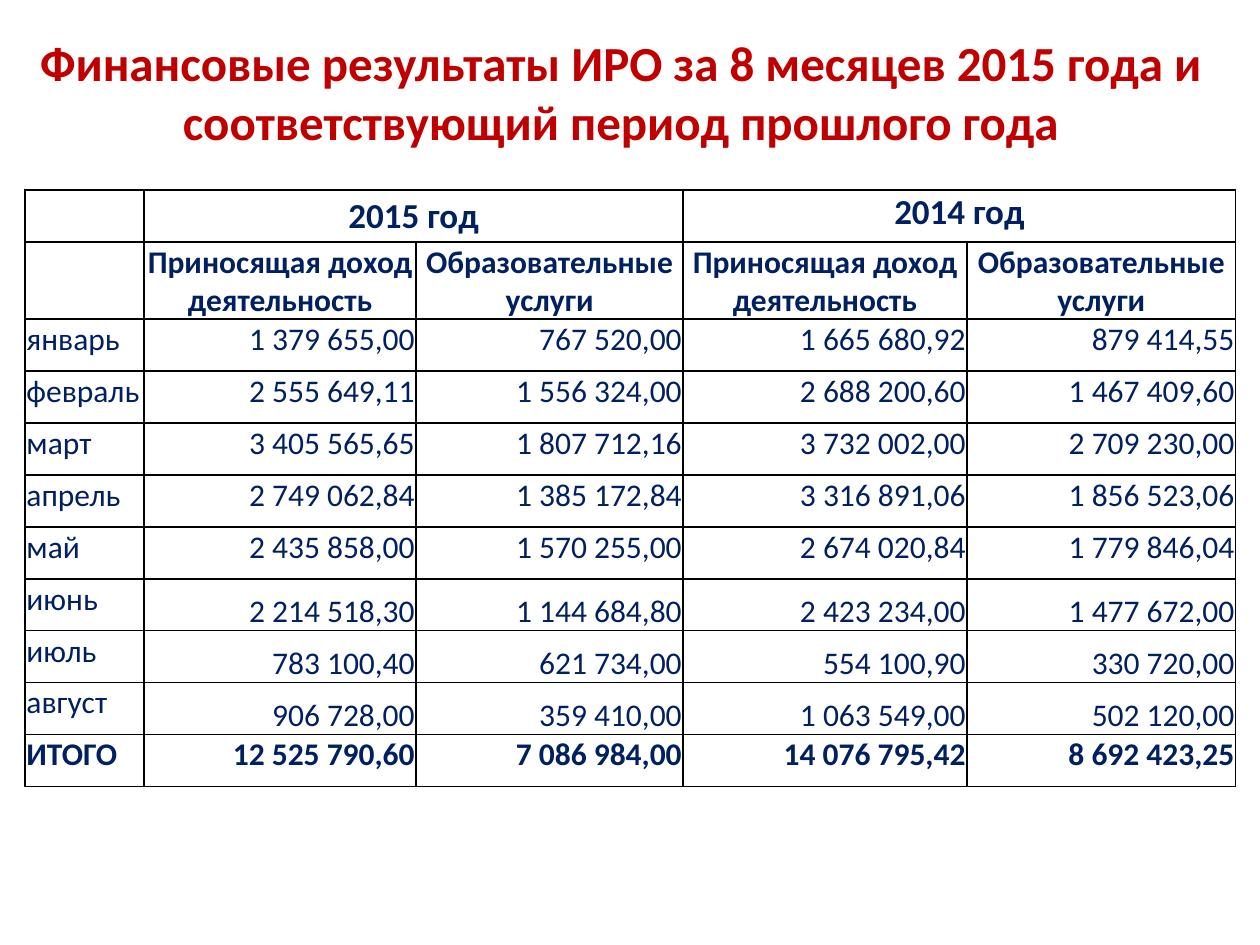
from lxml import etree
from pptx import Presentation
from pptx.dml.color import RGBColor
from pptx.enum.text import MSO_ANCHOR, PP_ALIGN
from pptx.oxml.ns import qn
from pptx.util import Pt

LEFT, CENTER, RIGHT = PP_ALIGN.LEFT, PP_ALIGN.CENTER, PP_ALIGN.RIGHT
TOP, MIDDLE, BOTTOM = MSO_ANCHOR.TOP, MSO_ANCHOR.MIDDLE, MSO_ANCHOR.BOTTOM

FONT = "Calibri"
RED, NAVY, BLACK = "C00000", "002060", "000000"
TITLE = "Финансовые результаты ИРО за 8 месяцев 2015 года и соответствующий период прошлого года"
YEARS = ["2015 год", "2014 год"]
INCOME_KINDS = ["Приносящая доход деятельность", "Образовательные услуги"]
RESULTS = [
    ["январь", "1 379 655,00", "767 520,00", "1 665 680,92", "879 414,55"],
    ["февраль", "2 555 649,11", "1 556 324,00", "2 688 200,60", "1 467 409,60"],
    ["март", "3 405 565,65", "1 807 712,16", "3 732 002,00", "2 709 230,00"],
    ["апрель", "2 749 062,84", "1 385 172,84", "3 316 891,06", "1 856 523,06"],
    ["май", "2 435 858,00", "1 570 255,00", "2 674 020,84", "1 779 846,04"],
    ["июнь", "2 214 518,30", "1 144 684,80", "2 423 234,00", "1 477 672,00"],
    ["июль", "783 100,40", "621 734,00", "554 100,90", "330 720,00"],
    ["август", "906 728,00", "359 410,00", "1 063 549,00", "502 120,00"],
    ["ИТОГО", "12 525 790,60", "7 086 984,00", "14 076 795,42", "8 692 423,25"],
]
LOW_MONTHS = ["июнь", "июль", "август"]
COLUMN_WIDTHS = [68, 155.4, 152.6, 162.2, 153.6]
ROW_HEIGHT = 29.7


def color(hex_text):
    return RGBColor.from_string(hex_text)


def write(frame, text, size, hex_text, bold, align):
    frame.text = text
    para = frame.paragraphs[0]
    para.alignment = align
    for span in para.runs:
        span.font.name = FONT
        span.font.size = Pt(size)
        span.font.bold = bold
        span.font.color.rgb = color(hex_text)


def add_title(page):
    box = page.shapes.add_textbox(Pt(14.4), Pt(15.1), Pt(680.4), Pt(74.9))
    box.text_frame.word_wrap = True
    write(box.text_frame, TITLE, 28, RED, True, CENTER)


def border_cell(cell):
    properties = cell._tc.get_or_add_tcPr()
    for side in ("lnL", "lnR", "lnT", "lnB"):
        line = etree.SubElement(properties, qn(f"a:{side}"), w=str(Pt(1)))
        fill = etree.SubElement(line, qn("a:solidFill"))
        etree.SubElement(fill, qn("a:srgbClr"), val=BLACK)


def prepare_cell(cell):
    border_cell(cell)
    cell.fill.background()
    cell.margin_left = cell.margin_right = cell.margin_top = Pt(0.75)
    cell.margin_bottom = Pt(0)


def fill_cell(cell, text, size, bold, align, anchor=TOP):
    write(cell.text_frame, text, size, NAVY, bold, align)
    cell.vertical_anchor = anchor


def fill_headings(table):
    for index, (year, anchor) in enumerate(zip(YEARS, (MIDDLE, TOP))):
        first = 1 + 2 * index
        table.cell(0, first).merge(table.cell(0, first + 1))
        fill_cell(table.cell(0, first), year, 20, True, CENTER, anchor)
        for offset, kind in enumerate(INCOME_KINDS):
            fill_cell(table.cell(1, first + offset), kind, 18, True, CENTER)


def fill_results(table):
    for row, (month, *amounts) in enumerate(RESULTS, start=2):
        bold = month == "ИТОГО"
        anchor = BOTTOM if month in LOW_MONTHS else TOP
        fill_cell(table.cell(row, 0), month, 18, bold, LEFT)
        for column, amount in enumerate(amounts, start=1):
            fill_cell(table.cell(row, column), amount, 18, bold, RIGHT, anchor)


def add_results_table(page):
    row_count = len(RESULTS) + 2
    table = page.shapes.add_table(
        row_count, len(COLUMN_WIDTHS), Pt(14.4), Pt(108.7),
        Pt(sum(COLUMN_WIDTHS)), Pt(ROW_HEIGHT * row_count)).table
    table.first_row = table.horz_banding = False
    for column, width in zip(table.columns, COLUMN_WIDTHS):
        column.width = Pt(width)
    for row in table.rows:
        row.height = Pt(ROW_HEIGHT)
    for cell in table.iter_cells():
        prepare_cell(cell)
    fill_headings(table)
    fill_results(table)


def main():
    deck = Presentation()
    deck.slide_width, deck.slide_height = Pt(720), Pt(540)
    page = deck.slides.add_slide(deck.slide_layouts[6])
    add_title(page)
    add_results_table(page)
    deck.save("out.pptx")


if __name__ == "__main__":
    main()
